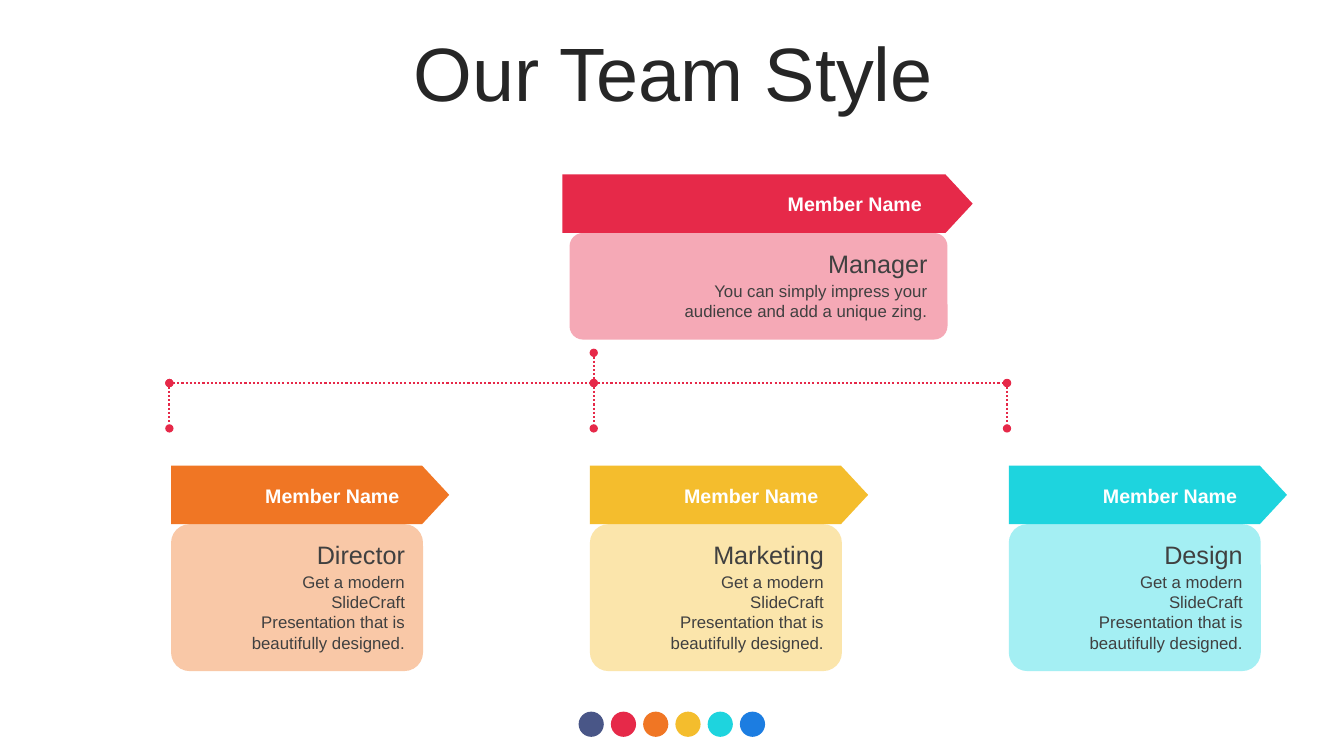
from lxml import etree
from pptx import Presentation
from pptx import util as u
from pptx.dml.color import RGBColor
from pptx.enum import dml, shapes, text
from pptx.oxml.ns import qn

Pt = u.Pt
RED, ORANGE, YELLOW, CYAN = "E62949", "F07624", "F4BD2D", "1ED4DE"
PALETTE = ["495687", RED, ORANGE, YELLOW, CYAN, "1C7DE1"]
GREY = "404040"
BANNER_H = 41.8
PITCH = 299.2
TEAM_BODY = "Get a modern SlideCraft Presentation that is beautifully designed."
MANAGER_BODY = "You can simply impress your audience and add a unique zing."


def color(hex_string):
    return RGBColor.from_string(hex_string)


def add_filled(s, kind, box, fill, adj=None):
    sp = s.shapes.add_shape(kind, *map(Pt, box))
    sp.shadow.inherit = False
    sp.fill.solid()
    sp.fill.fore_color.rgb = color(fill)
    sp.line.fill.background()
    if adj is not None:
        sp.adjustments[0] = adj
    return sp


def add_text(s, box, words, size, ink, bold=False, align=text.PP_ALIGN.RIGHT,
             auto_size=text.MSO_AUTO_SIZE.SHAPE_TO_FIT_TEXT, **paragraph_format):
    sp = s.shapes.add_textbox(*map(Pt, box))
    tf = sp.text_frame
    tf.word_wrap = True
    tf.auto_size = auto_size
    p = tf.paragraphs[0]
    for name, value in {"alignment": align, **paragraph_format}.items():
        setattr(p, name, value)
    r = p.add_run()
    r.text = words
    for name, value in {"name": "Arial", "size": Pt(size), "bold": bold}.items():
        setattr(r.font, name, value)
    r.font.color.rgb = color(ink)
    return tf


def add_title(s, box):
    tf = add_text(s, box, "Our Team Style", 54, "262626",
                  align=text.PP_ALIGN.CENTER, auto_size=text.MSO_AUTO_SIZE.NONE,
                  line_spacing=0.9, space_before=Pt(10))
    tf.vertical_anchor = text.MSO_ANCHOR.MIDDLE


def add_card(s, box, banner, role, body, dark, light, text_w, inset):
    """Draw a member card: box is the panel, banner the left and width of its arrow."""
    x, y, w, h = box
    banner_x, banner_w = banner
    top = y - BANNER_H
    add_filled(s, shapes.MSO_SHAPE.ROUNDED_RECTANGLE, box, light, 0.127)
    add_filled(s, shapes.MSO_SHAPE.PENTAGON, (banner_x, top, banner_w, BANNER_H),
               dark, 0.464)
    text_x = x + w - inset - text_w
    add_text(s, (text_x, y + 30.5, text_w, h - 40), body, 12, GREY)
    add_text(s, (text_x, y + 7.2, text_w, 29), role, 18, GREY)
    add_text(s, (text_x, top + 9.3, text_w, 24.5), "Member Name ", 14, "FFFFFF", True)


def add_dotted_line(s, x1, y1, x2, y2):
    c = s.shapes.add_connector(shapes.MSO_CONNECTOR.STRAIGHT,
                               *map(Pt, (x1, y1, x2, y2)))
    c.line.color.rgb = color(RED)
    c.line.width = Pt(1.5)
    c.line.dash_style = dml.MSO_LINE.ROUND_DOT
    ln = c.line._get_or_add_ln()
    for end in ("a:headEnd", "a:tailEnd"):
        etree.SubElement(ln, qn(end)).set("type", "oval")
    etree.SubElement(c._element.spPr, qn("a:effectLst"))


def add_tree(s, box, trunk_x, rise):
    """Draw the branch lines; rise is the trunk's length above the crossbar."""
    x, y, w, h = box
    bar = y + rise
    add_dotted_line(s, trunk_x, y, trunk_x, bar)
    add_dotted_line(s, x, bar, x + w, bar)
    for branch_x in (x, trunk_x, x + w):
        add_dotted_line(s, branch_x, bar, branch_x, y + h)


def add_palette(s, x, y, size, step):
    for i, fill in enumerate(PALETTE):
        add_filled(s, shapes.MSO_SHAPE.OVAL, (x + i * step, y, size, size), fill)


def main():
    prs = Presentation()
    prs.slide_width, prs.slide_height = Pt(960), Pt(540)
    s = prs.slides.add_slide(prs.slide_layouts[6])
    add_palette(s, 413.3, 508.3, 18, 23.04)
    add_title(s, (25.2, 26.6, 911.5, 56.9))
    add_card(s, (406.8, 166.4, 270, 76.2), (401.8, 293), "Manager", MANAGER_BODY,
             RED, "F5A9B6", 201.6, 7.2)
    team = [("Director", ORANGE, "F9C8A7"), ("Marketing", YELLOW, "FBE5AB"),
            ("Design", CYAN, "A4EFF3")]
    for i, (role, dark, light) in enumerate(team):
        x = 122.2 + i * PITCH
        add_card(s, (x, 374.4, 180, 105), (x, 198.7), role, TEAM_BODY,
                 dark, light, 125.3, 5.8)
    add_tree(s, (121, 252, 598.3, 54), 424.1, 21.6)
    prs.save("out.pptx")


if __name__ == "__main__":
    main()
